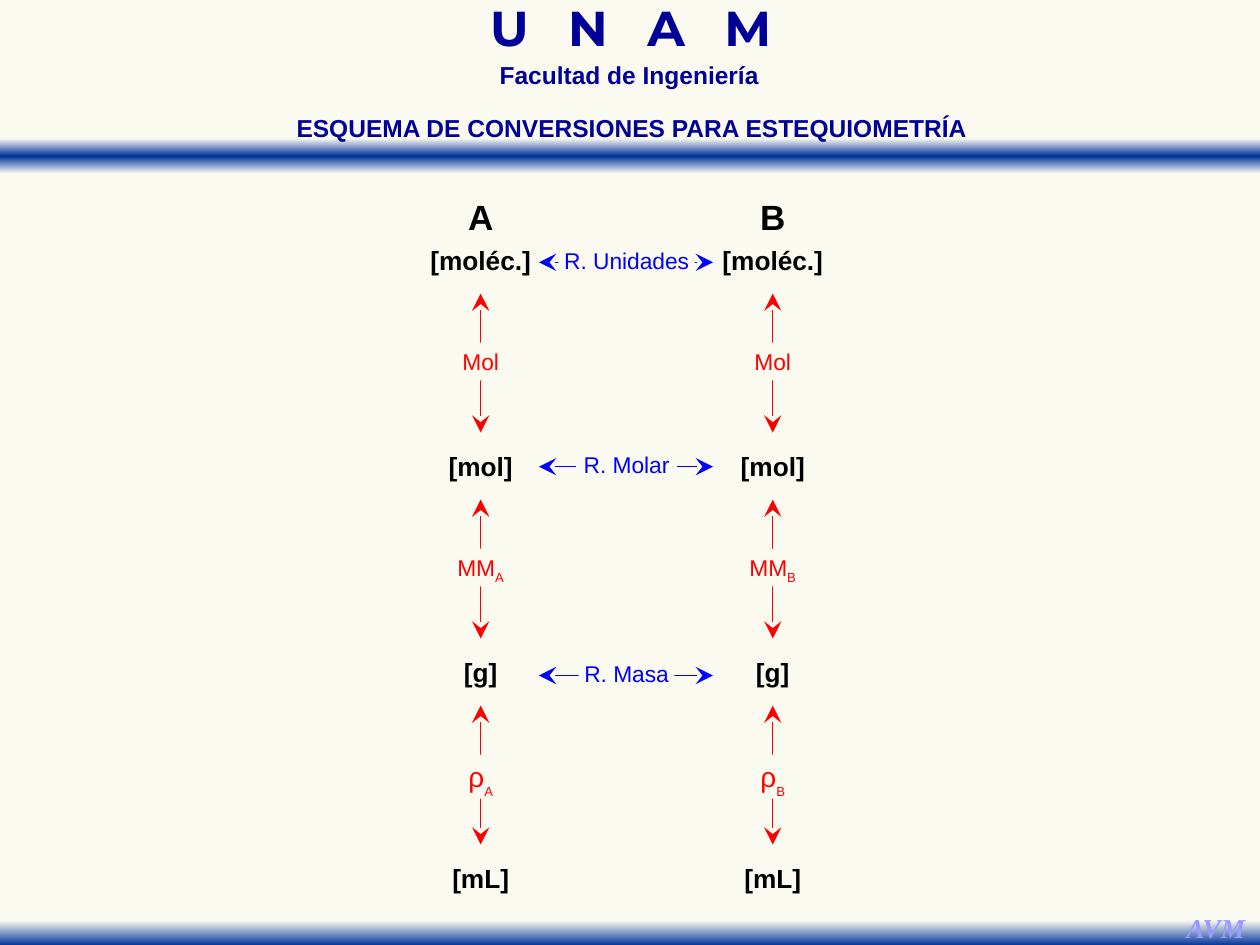
from lxml import etree
from pptx import Presentation, util as u
from pptx.dml.color import RGBColor
from pptx.enum import shapes, text
from pptx.oxml import ns

CREAM = RGBColor(0xFA, 0xFA, 0xF0)
PALE = RGBColor(0xFA, 0xFA, 0xF2)
BAND_BLUE = RGBColor(0x00, 0x33, 0x99)
NAVY = RGBColor(0x00, 0x00, 0x99)
LILAC = RGBColor(0x99, 0x99, 0xFF)
BLACK = RGBColor(0x00, 0x00, 0x00)
RED = RGBColor(0xFF, 0x00, 0x00)
BLUE = RGBColor(0x00, 0x00, 0xFF)

ROW_STEP = 117.7
COLUMNS = {"A": 274.7, "B": 441.6}
UNITS = [("[moléc.]", 72.7), ("[mol]", 51.8), ("[g]", 33.8), ("[mL]", 47.5)]
# Ratio name, label width, label centre
RATIOS = [("R. Unidades", 77.8, 149), ("R. Molar", 57.6, 265.8), ("R. Masa", 54.7, 385.1)]


class Painter:
    """Holds the style and the canvas (page or group) being drawn on."""

    font = "Arial"
    line_width = 0.75
    label_inset = 2.83

    def __init__(self, page):
        self.page = page
        self.canvas = page.shapes

    def start_group(self):
        self.canvas = self.page.shapes.add_group_shape().shapes

    def end_group(self):
        self.canvas = self.page.shapes

    def rectangle(self, left, top, width, height):
        box = self.canvas.add_shape(
            shapes.MSO_SHAPE.RECTANGLE, u.Pt(left), u.Pt(top), u.Pt(width), u.Pt(height))
        box.shadow.inherit = False
        box.line.fill.background()
        return box

    def band(self, top, stops):
        """Full-width bar with a vertical gradient of (percent, colour) stops."""
        box = self.rectangle(0, top, 720, 20)
        box.fill.gradient()
        box.fill.gradient_angle = 270
        stop_list = box._element.spPr.find(".//" + ns.qn("a:gsLst"))
        for stop in list(stop_list):
            stop_list.remove(stop)
        for percent, color in stops:
            stop = etree.SubElement(stop_list, ns.qn("a:gs"), pos=str(percent * 1000))
            etree.SubElement(stop, ns.qn("a:srgbClr"), val=str(color))

    def set_text(self, box, spans, size, color, bold=False, italic=False, font=None,
                 wrap=False, spacing=None):
        """Fill the box with one centred line; spans are (text, run settings)."""
        frame = box.text_frame
        frame.word_wrap = wrap
        frame.auto_size = text.MSO_AUTO_SIZE.SHAPE_TO_FIT_TEXT
        frame.vertical_anchor = text.MSO_ANCHOR.TOP
        para = frame.paragraphs[0]
        para.alignment = text.PP_ALIGN.CENTER
        if spacing:
            para.line_spacing = spacing
        for words, settings in spans:
            span = para.add_run()
            span.text = words
            span.font.name = font or self.font
            span.font.size = u.Pt(settings.get("size", size))
            span.font.bold, span.font.italic = bold, italic
            span.font.color.rgb = color
            for name in ("baseline", "spc"):
                if name in settings:
                    span._r.get_or_add_rPr().set(name, str(settings[name]))

    def caption(self, left, top, width, height, spans, size, color, **style):
        box = self.canvas.add_textbox(u.Pt(left), u.Pt(top), u.Pt(width), u.Pt(height))
        self.set_text(box, spans, size, color, **style)

    def tile(self, center, top, width, height, spans, size, color, bold=False, inset=None):
        """Text on a page-coloured rectangle that masks the line behind it."""
        box = self.rectangle(center - width / 2, top, width, height)
        box.fill.solid()
        box.fill.fore_color.rgb = CREAM
        if inset:
            frame = box.text_frame
            frame.margin_left = frame.margin_right = u.Pt(inset)
            frame.margin_top = frame.margin_bottom = u.Pt(inset)
        self.set_text(box, spans, size, color, bold=bold)

    def label(self, center, top, width, height, spans, size, color):
        self.tile(center, top, width, height, spans, size, color, inset=self.label_inset)

    def double_arrow(self, x1, y1, x2, y2, color):
        line = self.canvas.add_connector(
            shapes.MSO_CONNECTOR.STRAIGHT, u.Pt(x1), u.Pt(y1), u.Pt(x2), u.Pt(y2))
        line.line.color.rgb = color
        line.line.width = u.Pt(self.line_width)
        outline = line._element.spPr.find(ns.qn("a:ln"))
        for end in ("a:headEnd", "a:tailEnd"):
            etree.SubElement(outline, ns.qn(end), type="stealth", w="lg", len="lg")
        etree.SubElement(line._element.spPr, ns.qn("a:effectLst"))


def draw_frame(painter):
    painter.band(79.2, [(0, PALE), (50, BAND_BLUE), (100, PALE)])
    gap = (" ", {"spc": 1470})
    letters = [("U", {}), gap, ("N", {}), gap, ("A", {}), gap, ("M", {})]
    painter.caption(219.6, 4.3, 281.5, 31, letters, 28, NAVY, bold=True,
                    font="Montserrat", wrap=True, spacing=0.7)
    painter.caption(231.1, 35.3, 257, 19.4, [("Facultad de Ingeniería", {})], 14, NAVY,
                    bold=True, wrap=True, spacing=0.7)
    painter.band(520.4, [(28, PALE), (100, BAND_BLUE)])
    painter.caption(670.3, 517, 49, 26.6, [("AVM", {})], 15.6, LILAC, bold=True,
                    italic=True, font="Times New Roman")
    painter.caption(143.3, 61.2, 435.6, 24.5,
                    [("ESQUEMA DE CONVERSIONES PARA ESTEQUIOMETRÍA", {})], 14, NAVY,
                    bold=True, wrap=True)


def draw_substance(painter, name, center):
    """One column: units from molecules to millilitres and the factors between."""
    factors = [
        ([("Mol", {})], 26.6, 21.6, 13),
        ([("MM", {}), (name, {"baseline": -25000})], 33.8, 21.6, 13),
        ([("ρ", {}), (name, {"size": 13, "baseline": -40000})], 20.2, 25.2, 16),
    ]
    painter.start_group()
    painter.tile(center, 108, 29.5, 31.7, [(name, {})], 20, BLACK, bold=True)
    for row, (unit, width) in enumerate(UNITS):
        painter.tile(center, 136 + row * ROW_STEP, width, 25.2, [(unit, {})], 15, BLACK,
                     bold=True)
    for row, (spans, width, height, size) in enumerate(factors):
        offset = row * ROW_STEP
        painter.double_arrow(center, 247.2 + offset, center, 167.8 + offset, RED)
        painter.label(center, 195.8 + offset, width, height, spans, size, RED)
    painter.end_group()


def draw_ratios(painter):
    for name, width, middle in RATIOS:
        painter.double_arrow(308, middle + 0.9, 407.4, middle + 0.9, BLUE)
        painter.label(358, middle - 10.8, width, 21.6, [(name, {})], 13, BLUE)


def main():
    deck = Presentation()
    deck.slide_width, deck.slide_height = u.Pt(720), u.Pt(540)
    page = deck.slides.add_slide(deck.slide_layouts[6])
    page.background.fill.solid()
    page.background.fill.fore_color.rgb = CREAM
    painter = Painter(page)
    draw_frame(painter)
    for name, center in COLUMNS.items():
        draw_substance(painter, name, center)
    draw_ratios(painter)
    deck.save("out.pptx")


if __name__ == "__main__":
    main()
